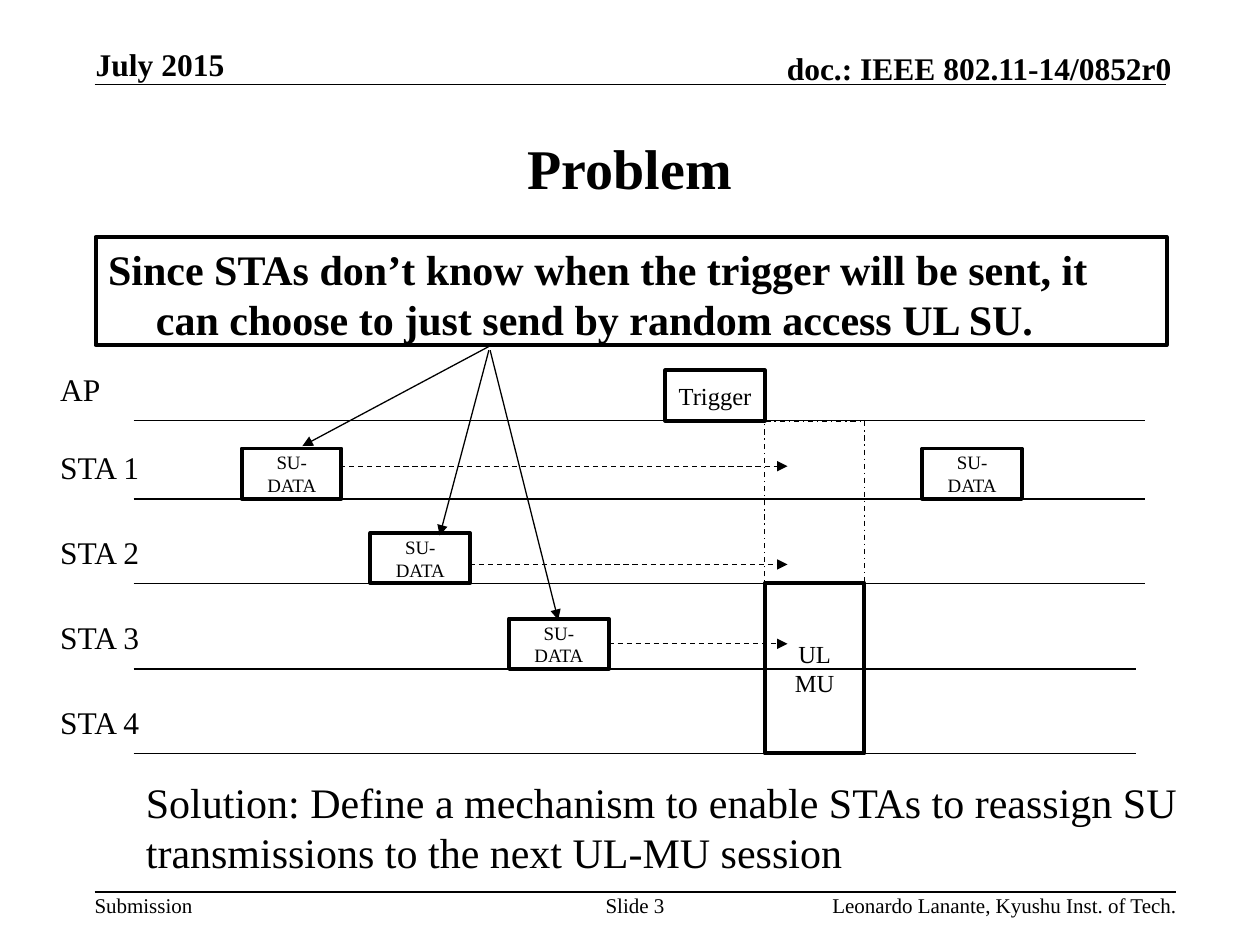
from lxml import etree
from pptx import Presentation, util as u
from pptx.dml.color import RGBColor
from pptx.enum import dml, shapes, text
from pptx.oxml import ns

BLACK = RGBColor(0, 0, 0)
FONT = "Times New Roman"
WIDTH, HEIGHT = 10, 7.5
MARGIN = 0.75
CONTENT_WIDTH = WIDTH - 2 * MARGIN
FOOTER_TOP = 7.08

# Timeline grid: one baseline per lane, one cell size for every frame
LANES = {"AP": 3.34, "STA 1": 3.96, "STA 2": 4.63, "STA 3": 5.31, "STA 4": 5.98}
LANE_LEFT = 1.06
LANE_RIGHTS = {"AP": 9.09, "STA 1": 9.09, "STA 2": 9.09, "STA 3": 9.02, "STA 4": 9.02}
LABEL_LEFT, LABEL_RISE = 0.38, 0.45
FRAME_WIDTH, FRAME_HEIGHT = 0.79, 0.4
TRIGGER_LEFT = 5.28
UPLINK_LEFT = TRIGGER_LEFT + FRAME_WIDTH
DEFER_END = 6.25

LEFT, CENTER, RIGHT = text.PP_ALIGN.LEFT, text.PP_ALIGN.CENTER, text.PP_ALIGN.RIGHT
TOP, MIDDLE, BOTTOM = (text.MSO_ANCHOR.TOP, text.MSO_ANCHOR.MIDDLE,
                       text.MSO_ANCHOR.BOTTOM)
DASH, DASH_DOT = dml.MSO_LINE.DASH, dml.MSO_LINE.DASH_DOT


def set_attributes(target, values):
    for name, value in values.items():
        setattr(target, name, value)


def style_line(line, points, dash=None):
    line.color.rgb = BLACK
    set_attributes(line, {"width": u.Pt(points), "dash_style": dash})


def write(shape, words, size, bold=False, align=LEFT, anchor=TOP,
          insets=(0.1, 0.05), wrap=True):
    """Fill a shape with text, one paragraph for each line of words."""
    frame = shape.text_frame
    across, down = map(u.Inches, insets)
    set_attributes(frame, {
        "text": words, "word_wrap": wrap, "vertical_anchor": anchor,
        "margin_left": across, "margin_right": across,
        "margin_top": down, "margin_bottom": down})
    for paragraph in frame.paragraphs:
        paragraph.alignment = align
        set_attributes(paragraph.runs[0].font, {
            "name": FONT, "size": u.Pt(size), "bold": bold})
        paragraph.runs[0].font.color.rgb = BLACK


def add_text(slide, box, words, size, **options):
    shape = slide.shapes.add_textbox(*map(u.Inches, box))
    write(shape, words, size, **options)
    return shape


def add_line(slide, start, end, points=0.75, dash=None, arrow=False):
    line = slide.shapes.add_connector(
        shapes.MSO_CONNECTOR.STRAIGHT, *map(u.Inches, (*start, *end)))
    style_line(line.line, points, dash)
    if arrow:
        etree.SubElement(line.line._get_or_add_ln(), ns.qn("a:tailEnd"),
                         type="triangle")
    etree.SubElement(line._element.spPr, ns.qn("a:effectLst"))


def add_frame(slide, left, lane, words="", size=14, height=FRAME_HEIGHT,
              points=2.25, dash=None):
    """Add an unfilled box that stands on the baseline of a lane."""
    box = (left, LANES[lane] - height, FRAME_WIDTH, height)
    shape = slide.shapes.add_shape(shapes.MSO_SHAPE.RECTANGLE, *map(u.Inches, box))
    shape.shadow.inherit = False
    shape.fill.background()
    style_line(shape.line, points, dash)
    if words:
        write(shape, words, size, align=CENTER, anchor=MIDDLE)


def add_header_and_footer(slide):
    heading = {"size": 18, "bold": True, "anchor": BOTTOM, "insets": (0, 0)}
    add_text(slide, (0.76, 0.36, 2.05, 0.3), "July 2015", **heading)
    add_text(slide, (5.47, 0.39, 3.83, 0.3), "doc.: IEEE 802.11-14/0852r0",
             align=RIGHT, **heading)
    add_line(slide, (MARGIN, 0.67), (WIDTH - MARGIN, 0.67), 1)

    add_line(slide, (MARGIN, FOOTER_TOP), (9.33, FOOTER_TOP), 1)
    for left, width, words, align in (
            (MARGIN, 0.78, "Submission", LEFT),
            (4.75, 0.58, "Slide 3", CENTER),
            (5.86, 3.48, "Leonardo Lanante, Kyushu Inst. of Tech.", RIGHT)):
        add_text(slide, (left, FOOTER_TOP, width, 0.2), words, 12, align=align,
                 insets=(0, 0), wrap=False if align == LEFT else True)


def add_statements(slide):
    add_text(slide, (MARGIN, 0.75, CONTENT_WIDTH, 1.16), "Problem", 32, bold=True,
             align=CENTER, anchor=MIDDLE)
    problem = add_text(
        slide, (0.76, 1.88, CONTENT_WIDTH, 0.86),
        "Since STAs don’t know when the trigger will be sent, it can choose "
        "to just send by random access UL SU.", 24, bold=True)
    style_line(problem.line, 2.25)
    paragraph = problem.text_frame.paragraphs[0]
    paragraph.space_before = u.Pt(6)
    indent = u.Inches(0.38)
    for name, value in {"marL": indent, "indent": -indent}.items():
        paragraph._p.get_or_add_pPr().set(name, str(value))
    add_text(slide, (LANE_LEFT, 6.11, 8.43, 0.91),
             "Solution: Define a mechanism to enable STAs to reassign SU "
             "transmissions to the next UL-MU session", 24)


def add_lanes(slide):
    for label, baseline in LANES.items():
        add_text(slide, (LABEL_LEFT, baseline - LABEL_RISE, 0.83, 0.4), label, 18,
                 wrap=False)
        add_line(slide, (LANE_LEFT, baseline), (LANE_RIGHTS[label], baseline))


def add_transmissions(slide):
    add_frame(slide, TRIGGER_LEFT, "AP", "Trigger")
    add_frame(slide, UPLINK_LEFT, "STA 4", "UL\nMU",
              height=LANES["STA 4"] - LANES["STA 2"])
    add_frame(slide, UPLINK_LEFT, "STA 2", height=LANES["STA 2"] - LANES["AP"],
              points=0.75, dash=DASH_DOT)
    for lane, left in (("STA 1", 1.92), ("STA 2", 2.94), ("STA 3", 4.04),
                       ("STA 1", 7.32)):
        add_frame(slide, left, lane, "SU-DATA", 10.8)
    for start, height in ((2.7, 3.7), (3.73, 4.48), (4.83, 5.11)):
        add_line(slide, (start, height), (DEFER_END, height), dash=DASH, arrow=True)
    for start, end in (((3.88, 2.75), (2.4, 3.54)), ((3.88, 2.78), (3.49, 4.25)),
                       ((3.89, 2.78), (4.43, 4.92))):
        add_line(slide, start, end, arrow=True)


def main():
    presentation = Presentation()
    set_attributes(presentation, {"slide_width": u.Inches(WIDTH),
                                  "slide_height": u.Inches(HEIGHT)})
    slide = presentation.slides.add_slide(presentation.slide_layouts[6])
    add_header_and_footer(slide)
    add_statements(slide)
    add_lanes(slide)
    add_transmissions(slide)
    presentation.save("out.pptx")


if __name__ == "__main__":
    main()
